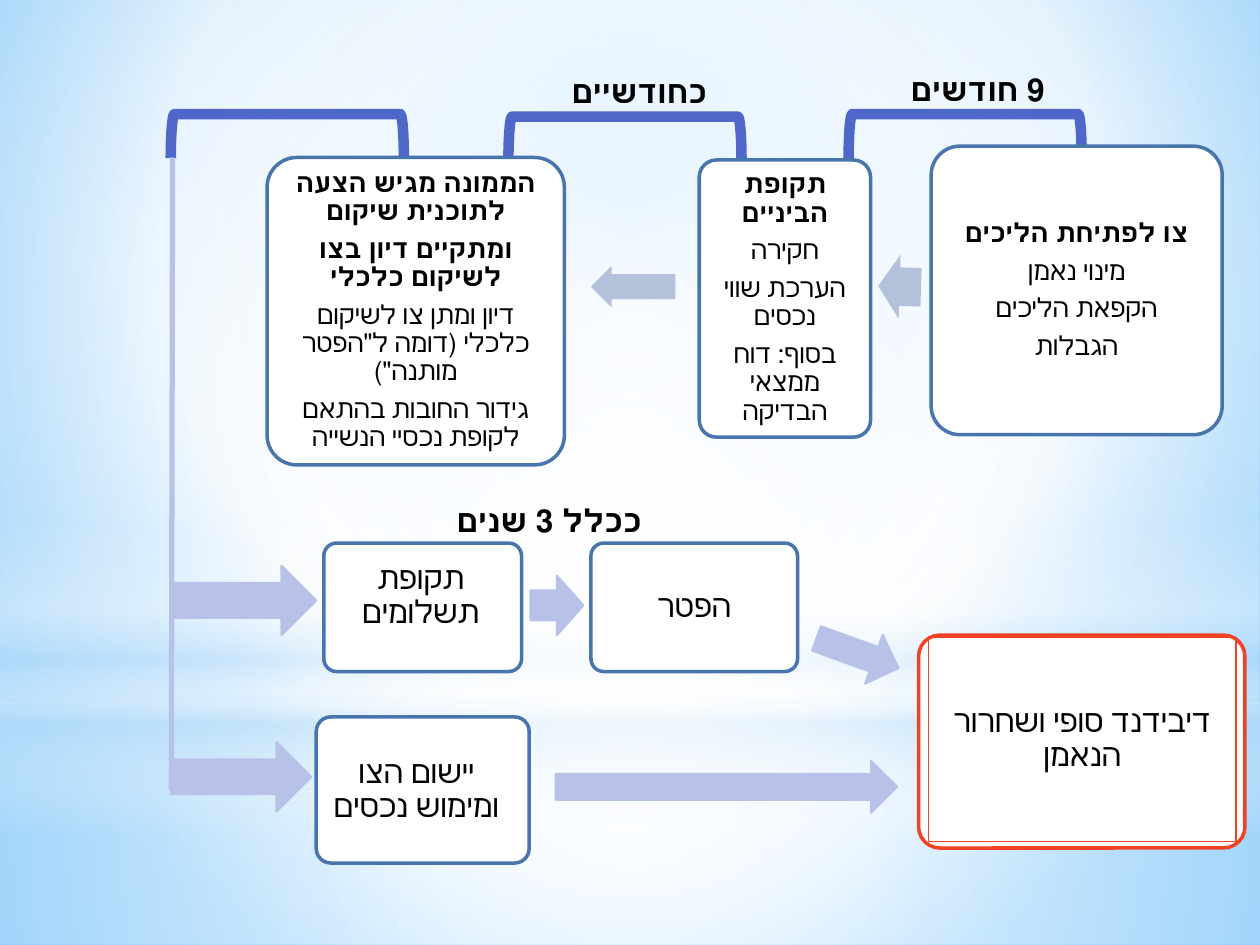
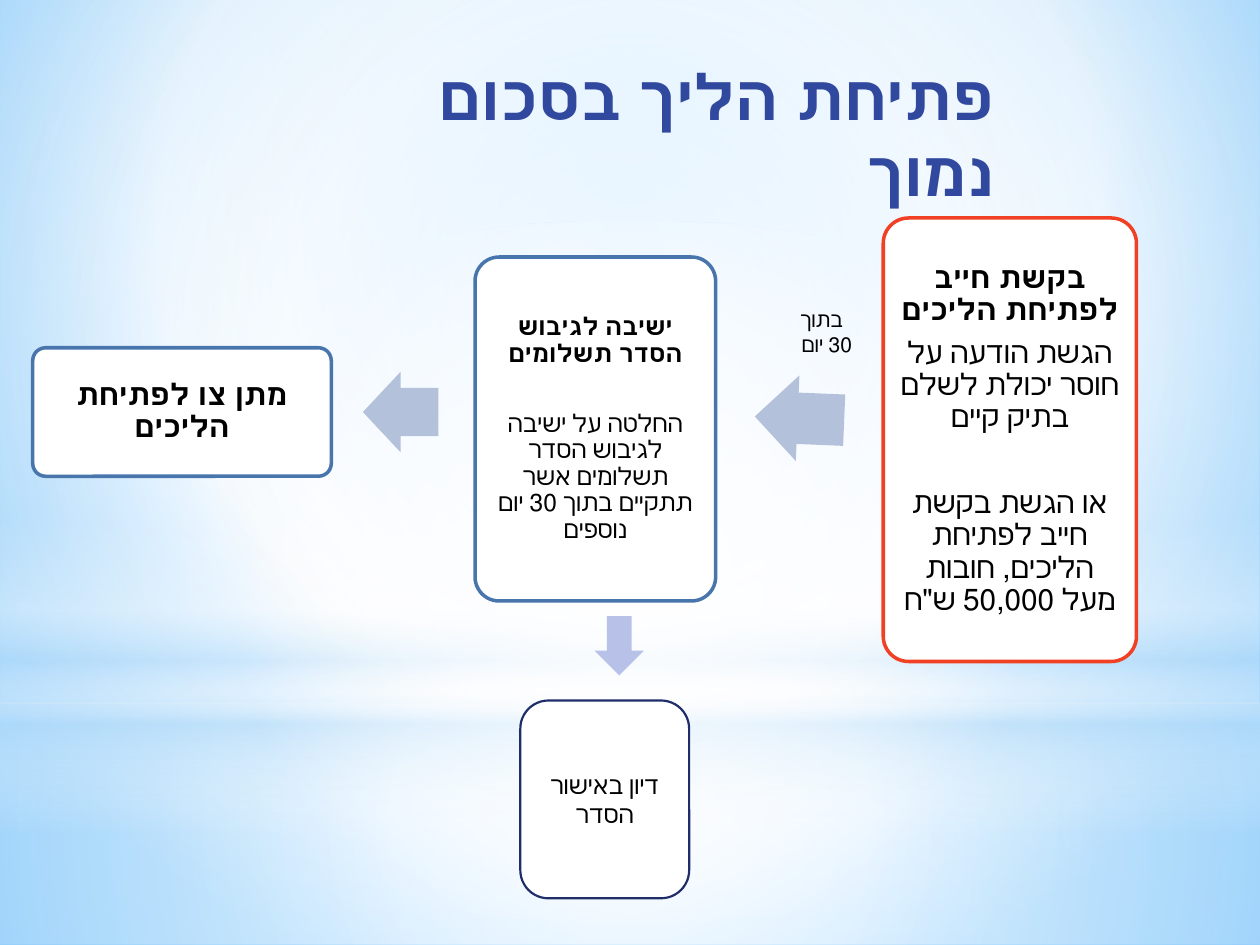
import pptx
import pptx.util
import pptx.dml.color
import pptx.enum.lang
import pptx.enum.shapes
import pptx.enum.text
import pptx.oxml
import pptx.oxml.ns

Inches, Pt = pptx.util.Inches, pptx.util.Pt
SHAPE = pptx.enum.shapes.MSO_SHAPE
ANCHOR = pptx.enum.text.MSO_ANCHOR
ALIGN = pptx.enum.text.PP_ALIGN
qn, nsdecls = pptx.oxml.ns.qn, pptx.oxml.ns.nsdecls

COLORS = {
    "text": "000000", "title": "31489F", "bracket": "4E67C8", "white": "FFFFFF",
    "blue": "4875AC", "red": "F14124", "navy": "1F2E69",
    "step": "B3C1DB", "path": "B8C2E9",
}
BODY_FONT, LABEL_FONT = "Calibri", "Karla"

# Backdrop: stops are (position %, colour, opacity %)
CENTRE = (50, 50, 50, 50)
BACKGROUND = ([(0, "9ED5FF", 100), (60, "FFFFFF", 100), (100, "5BB9FF", 100)], (20, 10, 20, 60))
BACKDROP = [
    (SHAPE.RECTANGLE, (0, 5.58, 10, 1.92),
     [(0, "FFFFFF", 91), (37, "FFFFFF", 76), (100, "B4DCFA", 79)], CENTRE),
    (SHAPE.RECTANGLE, (0, 0, 10, 5.58),
     [(0, "FFFFFF", 89), (48, "FFFFFF", 62), (100, "B4DCFA", 79)], CENTRE),
    (SHAPE.RECTANGLE, (0, 4.12, 10, 2.5),
     [(0, "FFFFFF", 0), (29, "FFFFFF", 30), (45, "B4DCFA", 40), (55, "FFFFFF", 26),
      (65, "B4DCFA", 60), (100, "FFFFFF", 0)], None),
    (SHAPE.OVAL, (0, 1.75, 10, 5.58), [(0, "FFFFFF", 100), (56, "FFFFFF", 0)], CENTRE),
]

# Slide 1: boxes are (place, size, bold heads, details, options)
BRACKET_CENTRES = [(7.66, 1.08), (4.96, 1.1), (2.28, 1.08)]
BRACKET_SIZE = (0.35, 1.85)
PERIOD_LABELS = [
    ((6.89, 0.51, 1.5, 0.4), "9 חודשים"),
    ((4.21, 0.52, 1.5, 0.4), "כחודשיים"),
    ((3.3, 3.93, 1.89, 0.4), "ככלל 3 שנים"),
]
STAGES = [
    ((7.39, 1.16, 2.31, 2.29), 15, ["צו לפתיחת הליכים"],
     ["מינוי נאמן", "הקפאת הליכים", "הגבלות"], {}),
    ((5.55, 1.27, 1.36, 2.2), 15, ["תקופת הביניים"],
     ["חקירה", "הערכת שווי נכסים", "בסוף: דוח ממצאי הבדיקה"], {}),
    ((2.12, 1.25, 2.36, 2.44), 15,
     ["הממונה מגיש הצעה לתוכנית שיקום", "ומתקיים דיון בצו לשיקום כלכלי"],
     ["דיון ומתן צו לשיקום כלכלי (דומה ל\"הפטר מותנה\")",
      "גידור החובות בהתאם לקופת נכסיי הנשייה"], {}),
    ((2.51, 5.69, 1.69, 1.16), 18, [], ["יישום הצו ומימוש נכסים"],
     {"insets": (0.03, 0.03, 0.13, 0.03)}),
    ((2.57, 4.31, 1.57, 1.02), 18, [], ["תקופת תשלומים"],
     {"insets": (0.03, 0.03, 0.06, 0.2)}),
    ((4.69, 4.31, 1.64, 1.02), 18, [], ["הפטר"], {"insets": (0.03,) * 4}),
    ((7.29, 5.04, 2.59, 1.69), 18, [], [], {"line": "red"}),
]
FINAL_STEP = ((7.37, 5.06, 2.44, 1.62), "דיבידנד סופי ושחרור הנאמן")
STAGE_ARROWS = [((6.97, 2.02, 0.34, 0.51), 181.7), ((4.69, 2.11, 0.67, 0.33), 180)]
TRUNK = (1.37, 1.25, 1.36, 6.27)
PATH_ARROWS = [
    ((1.37, 4.49, 1.14, 0.55), 0), ((1.36, 5.89, 1.11, 0.55), 0),
    ((4.21, 4.57, 0.42, 0.47), 0), ((6.46, 4.98, 0.69, 0.41), 19.9),
    ((4.41, 6.04, 2.71, 0.41), 0),
]

# Slide 2
TITLE = ((2.24, 0.41, 5.75, 1.01), "פתיחת הליך בסכום נמוך")
REQUESTS = [
    ((7.01, 1.73, 2.01, 3.52), 17, ["בקשת חייב לפתיחת הליכים"],
     ["הגשת הודעה על חוסר יכולת לשלם בתיק קיים",
      "או הגשת בקשת חייב לפתיחת הליכים, חובות מעל 50,000 ש\"ח"],
     {"line": "red", "insets": (0.07,) * 4, "gap_before": 2}),
    ((3.77, 2.04, 1.91, 2.73), 14, ["ישיבה לגיבוש הסדר תשלומים"],
     ["החלטה על ישיבה לגיבוש הסדר תשלומים אשר תתקיים בתוך 30 יום נוספים"],
     {"gap_before": 1}),
    ((0.26, 2.76, 2.37, 1.02), 17, ["מתן צו לפתיחת הליכים"], [], {"insets": (0.07,) * 4}),
]
REQUEST_ARROWS = [((5.99, 2.98, 0.71, 0.68), 182.4), ((2.88, 2.95, 0.6, 0.64), 180)]
DEADLINE = ((6.18, 2.38, 0.68, 0.5), ["בתוך", "30 יום"])
HEARING = ((4.13, 5.56, 1.34, 1.57), "דיון באישור הסדר")
HEARING_ARROW = (4.72, 4.89, 0.39, 0.47)


def rgb(name):
    return pptx.dml.color.RGBColor.from_string(COLORS[name])


def inches(values):
    return [Inches(v) for v in values]


def set_gradient(holder, stops, centre):
    """Swap the solid fill in holder for a gradient; no centre means top to bottom."""
    gs = "".join(
        f'<a:gs pos="{pos * 1000}"><a:srgbClr val="{color}">'
        f'<a:alpha val="{alpha * 1000}"/></a:srgbClr></a:gs>' for pos, color, alpha in stops)
    if centre:
        l, t, r, b = (v * 1000 for v in centre)
        way = (f'<a:path path="circle"><a:fillToRect l="{l}" t="{t}" r="{r}" b="{b}"/></a:path>')
    else:
        way = '<a:lin ang="5400000" scaled="0"/>'
    grad = pptx.oxml.parse_xml(
        f'<a:gradFill {nsdecls("a")} rotWithShape="1"><a:gsLst>{gs}</a:gsLst>{way}</a:gradFill>')
    holder.replace(holder.find(qn("a:solidFill")), grad)


def add_shape(slide, kind, place, fill=None, line=None, width=1.25, rot=0, adj=None):
    sp = slide.shapes.add_shape(kind, *inches(place))
    sp.shadow.inherit = False
    sp.rotation = rot
    if adj:
        for i, value in enumerate(adj):
            sp.adjustments[i] = value
    if fill:
        sp.fill.solid()
        sp.fill.fore_color.rgb = rgb(fill)
    else:
        sp.fill.background()
    if line:
        sp.line.color.rgb = rgb(line)
        sp.line.width = Pt(width)
    else:
        sp.line.fill.background()
    return sp


def format_paragraph(p, size, font, align, bold=False, color="text", tight=False):
    p.alignment = align
    pPr = p._p.get_or_add_pPr()
    pPr.set("rtl", "1")
    if tight:
        p.line_spacing = 0.9
        p.space_after = Pt(0)
        after = pPr.find(qn("a:spcAft"))
        after.replace(after[0], pptx.oxml.parse_xml(
            f'<a:spcPct {nsdecls("a")} val="35000"/>'))
    for r in p.runs:
        r.font.size, r.font.name, r.font.bold = Pt(size), font, bold
        r.font.color.rgb = rgb(color)
        r.font.language_id = pptx.enum.lang.MSO_LANGUAGE_ID.HEBREW
        r.font._element.append(pptx.oxml.parse_xml(
            f'<a:cs {nsdecls("a")} typeface="+mn-cs"/>'))


def set_insets(tf, insets):
    tf.margin_left, tf.margin_top, tf.margin_right, tf.margin_bottom = inches(insets)


def fill_box(sp, size, heads, details, insets=(0.06,) * 4, gap_before=None):
    tf = sp.text_frame
    tf.word_wrap = True
    tf.vertical_anchor = ANCHOR.MIDDLE
    set_insets(tf, insets)
    tf.text = "\n".join(heads + details)
    for i, p in enumerate(tf.paragraphs):
        format_paragraph(p, size, BODY_FONT, ALIGN.CENTER, i < len(heads), tight=True)
        if i == gap_before:
            p.space_before = Pt(round(size * 1.45))


def add_boxes(slide, boxes):
    for place, size, heads, details, options in boxes:
        options = dict(options)
        sp = add_shape(slide, SHAPE.ROUNDED_RECTANGLE, place, "white",
                       options.pop("line", "blue"), 2, adj=[0.1])
        if heads or details:
            fill_box(sp, size, heads, details, **options)


def add_step_arrows(slide, arrows):
    for place, rot in arrows:
        add_shape(slide, SHAPE.RIGHT_ARROW, place, "step", rot=rot, adj=[0.6, 0.5])


def add_label(slide, place, lines, size, aligns, bold=False, wrap=True):
    tf = slide.shapes.add_textbox(*inches(place)).text_frame
    tf.word_wrap = wrap
    tf.text = "\n".join(lines)
    for p, align in zip(tf.paragraphs, aligns):
        format_paragraph(p, size, LABEL_FONT, align, bold)


def build_backdrop(prs, slide):
    """Put the shared background and light bands on the slide master."""
    master = prs.slide_master
    master.background.fill.solid()
    set_gradient(master.element.xpath("p:cSld/p:bg/p:bgPr")[0], *BACKGROUND)
    for i, (kind, place, stops, centre) in enumerate(BACKDROP):
        sp = add_shape(slide, kind, place, "white")
        set_gradient(sp.element.spPr, stops, centre)
        sp.element.xpath(".//p:cNvPr")[0].set("id", str(100 + i))
        master.shapes.element.insert(2 + i, sp.element)


def build_process(slide):
    w, h = BRACKET_SIZE
    for x, y in BRACKET_CENTRES:
        add_shape(slide, SHAPE.LEFT_BRACKET, (x - w / 2, y - h / 2, w, h),
                  line="bracket", width=6, rot=90)
    add_boxes(slide, STAGES)
    add_step_arrows(slide, STAGE_ARROWS)

    # Final step: thin inner frame that holds the text
    place, text = FINAL_STEP
    sp = add_shape(slide, SHAPE.RECTANGLE, place, line="red", width=0.75)
    fill_box(sp, 18, [], [text], insets=(0.03,) * 4)

    # Trunk line and the two paths that leave it
    trunk = slide.shapes.add_connector(
        pptx.enum.shapes.MSO_CONNECTOR.STRAIGHT, *inches(TRUNK))
    trunk.line.color.rgb = rgb("path")
    trunk.line.width = Pt(3)
    trunk.element.spPr.append(pptx.oxml.parse_xml(f'<a:effectLst {nsdecls("a")}/>'))
    for place, rot in PATH_ARROWS:
        add_shape(slide, SHAPE.RIGHT_ARROW, place, "path", "path", rot=rot)

    for place, text in PERIOD_LABELS:
        add_label(slide, place, [text], 18, [ALIGN.RIGHT], bold=True)


def build_low_sum(slide):
    # Title
    place, text = TITLE
    title = slide.shapes.title
    title.left, title.top, title.width, title.height = inches(place)
    tf = title.text_frame
    tf.text = text
    tf.word_wrap = True
    tf.auto_size = pptx.enum.text.MSO_AUTO_SIZE.NONE
    tf.vertical_anchor = ANCHOR.TOP
    format_paragraph(tf.paragraphs[0], 36, LABEL_FONT, ALIGN.RIGHT, True, "title")

    # Request flow
    add_boxes(slide, REQUESTS)
    add_step_arrows(slide, REQUEST_ARROWS)
    add_label(slide, *DEADLINE, 12, [ALIGN.CENTER, ALIGN.RIGHT], wrap=False)

    # Hearing
    place, text = HEARING
    sp = add_shape(slide, SHAPE.ROUNDED_RECTANGLE, place, "white", "navy")
    sp.text_frame.text = text
    sp.text_frame.word_wrap = True
    sp.text_frame.vertical_anchor = ANCHOR.MIDDLE
    format_paragraph(sp.text_frame.paragraphs[0], 14, LABEL_FONT, ALIGN.CENTER)
    add_shape(slide, SHAPE.DOWN_ARROW, HEARING_ARROW, "path")


def main():
    prs = pptx.Presentation()
    prs.slide_width, prs.slide_height = Inches(10), Inches(7.5)
    title_only, blank = prs.slide_layouts[5], prs.slide_layouts[6]
    process = prs.slides.add_slide(blank)
    build_backdrop(prs, process)
    build_process(process)
    build_low_sum(prs.slides.add_slide(title_only))
    prs.save("out.pptx")


if __name__ == "__main__":
    main()
